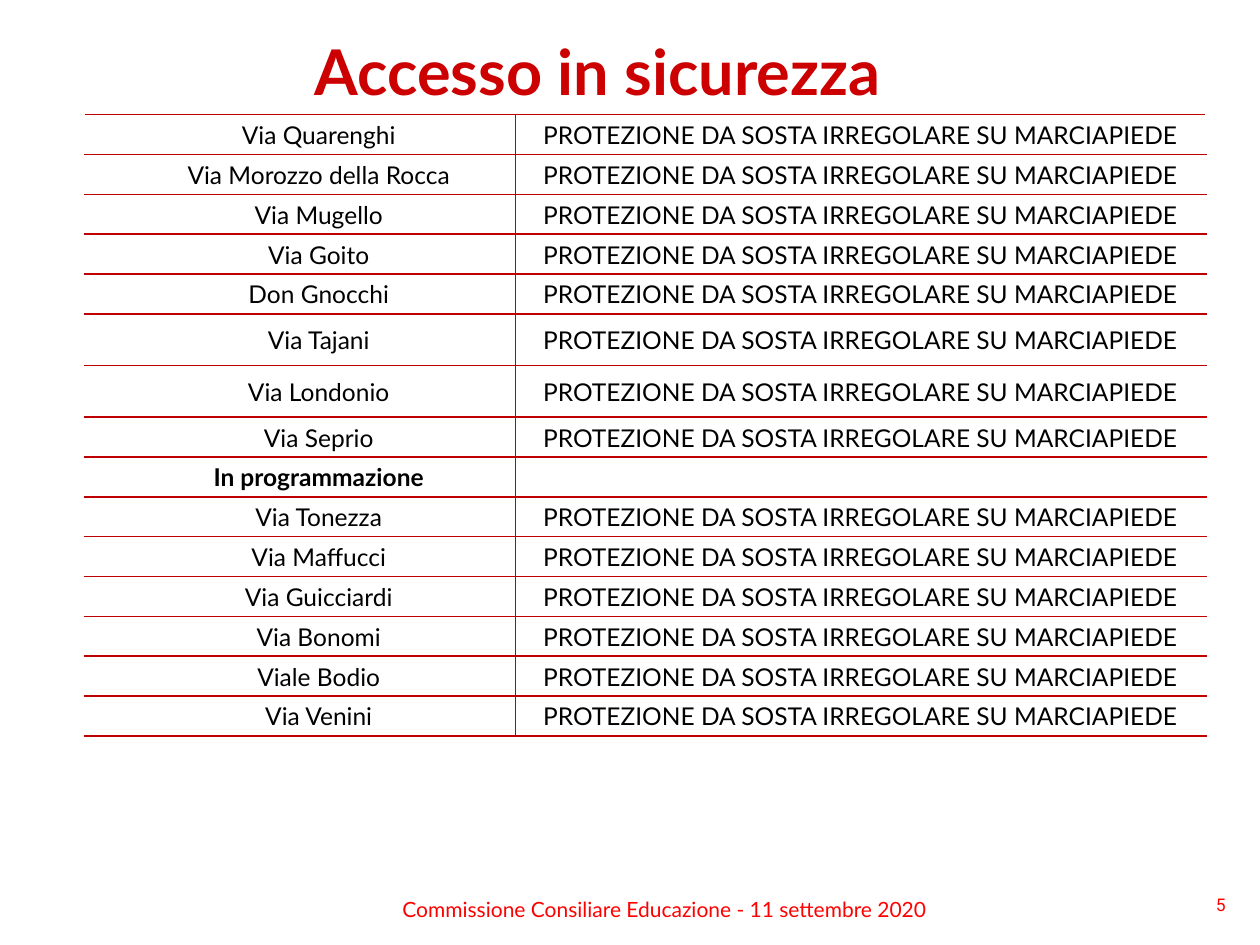
"""Build the slide listing streets with protected access to schools."""
from typing import NamedTuple, Optional

from lxml import etree
from pptx import Presentation
from pptx import util as u
from pptx.dml.color import RGBColor
from pptx.enum import text
from pptx.oxml import ns

TITLE_RED = RGBColor(0xCC, 0x00, 0x00)
RULE_RED = RGBColor(0xC0, 0x00, 0x00)
RED = RGBColor(0xFF, 0x00, 0x00)
WHITE = RGBColor(0xFF, 0xFF, 0xFF)
BLACK = RGBColor(0x00, 0x00, 0x00)
MEASURE = "PROTEZIONE DA SOSTA IRREGOLARE SU MARCIAPIEDE"
TABLE_HEIGHT = 4.93
TALL_ROW = 0.41


class Street(NamedTuple):
    name: str
    measure: str = MEASURE
    bold: bool = False
    tall: bool = False


class Label(NamedTuple):
    wording: str
    left: float
    top: float
    width: float
    height: float
    size: float
    color: RGBColor
    font: str = "Lato"
    bold: bool = False
    align: Optional[text.PP_ALIGN] = None
    inset: float = 0.1


STREETS = [
    Street("Via Quarenghi"),
    Street("Via Morozzo della Rocca"),
    Street("Via Mugello"),
    Street("Via Goito"),
    Street("Don Gnocchi"),
    Street("Via Tajani", tall=True),
    Street("Via Londonio", tall=True),
    Street("Via Seprio"),
    Street("In programmazione", measure="", bold=True),
    Street("Via Tonezza"),
    Street("Via Maffucci"),
    Street("Via Guicciardi"),
    Street("Via Bonomi"),
    Street("Viale Bodio"),
    Street("Via Venini"),
]

LABELS = [
    Label("Accesso in sicurezza", 2.4, 0.21, 5.28, 0.71, 36, TITLE_RED, bold=True),
    Label("Commissione Consiliare Educazione - 11 settembre 2020",
          1.14, 7.07, 8.27, 0.3, 12, RED, align=text.PP_ALIGN.CENTER),
    Label("5", 9.45, 7.05, 0.53, 0.27, 10, RED, font="Roboto", inset=0.2),
]


def add_run(p, wording: str, size: float, color: RGBColor, font: str, bold: bool) -> None:
    r = p.add_run()
    r.text = wording
    r.font.size = u.Pt(size)
    r.font.name = font
    r.font.bold = bold
    r.font.color.rgb = color


def add_label(s, label: Label) -> None:
    sp = s.shapes.add_textbox(u.Inches(label.left), u.Inches(label.top),
                              u.Inches(label.width), u.Inches(label.height))
    tf = sp.text_frame
    tf.word_wrap = True
    tf.auto_size = text.MSO_AUTO_SIZE.SHAPE_TO_FIT_TEXT
    tf.margin_left = u.Inches(label.inset)
    p = tf.paragraphs[0]
    p.alignment = label.align
    add_run(p, label.wording, label.size, label.color, label.font, label.bold)


def set_borders(cell, left: RGBColor, right: RGBColor) -> None:
    tc_pr = cell._tc.get_or_add_tcPr()
    sides = (("a:lnL", left), ("a:lnR", right), ("a:lnT", RULE_RED), ("a:lnB", RULE_RED))
    for i, (tag, color) in enumerate(sides):
        ln = etree.Element(ns.qn(tag), w=str(u.Pt(1)))
        fill = etree.SubElement(ln, ns.qn("a:solidFill"))
        etree.SubElement(fill, ns.qn("a:srgbClr"), val=str(color))
        tc_pr.insert(i, ln)


def fill_cell(cell, wording: str, bold: bool, indented: bool) -> None:
    cell.fill.solid()
    cell.fill.fore_color.rgb = WHITE
    cell.vertical_anchor = text.MSO_ANCHOR.MIDDLE
    cell.margin_left = cell.margin_right = cell.margin_top = u.Inches(0.01)
    cell.margin_bottom = 0
    p = cell.text_frame.paragraphs[0]
    p.alignment = text.PP_ALIGN.CENTER
    if indented:
        p.level = 1
        p_pr = p._p.get_or_add_pPr()
        p_pr.set("marL", str(u.Inches(0.5)))
        p_pr.set("indent", str(u.Inches(-0.2)))
    if wording:
        add_run(p, wording, 14, BLACK, "Lato", bold)
    else:
        etree.SubElement(p._p, ns.qn("a:endParaRPr"), sz="1400")


def add_streets(s, streets: list[Street]) -> None:
    frame = s.shapes.add_table(len(streets), 2, u.Inches(0.67), u.Inches(0.91),
                               u.Inches(8.9), u.Inches(TABLE_HEIGHT))
    table = frame.table
    table.first_row = table.horz_banding = False
    for column, width in zip(table.columns, (3.42, 5.48)):
        column.width = u.Inches(width)
    tall_rows = sum(street.tall for street in streets)
    short_row = (TABLE_HEIGHT - tall_rows * TALL_ROW) / (len(streets) - tall_rows)
    for row, street in zip(table.rows, streets):
        row.height = u.Inches(TALL_ROW if street.tall else short_row)
        name, measure = row.cells
        fill_cell(name, street.name, street.bold, indented=True)
        set_borders(name, WHITE, RULE_RED)
        fill_cell(measure, street.measure, False, indented=False)
        set_borders(measure, RULE_RED, WHITE)


def main() -> None:
    prs = Presentation()
    prs.slide_width, prs.slide_height = u.Inches(10), u.Inches(7.5)
    s = prs.slides.add_slide(prs.slide_layouts[6])
    add_streets(s, STREETS)
    for label in LABELS:
        add_label(s, label)
    prs.save("out.pptx")


if __name__ == "__main__":
    main()
